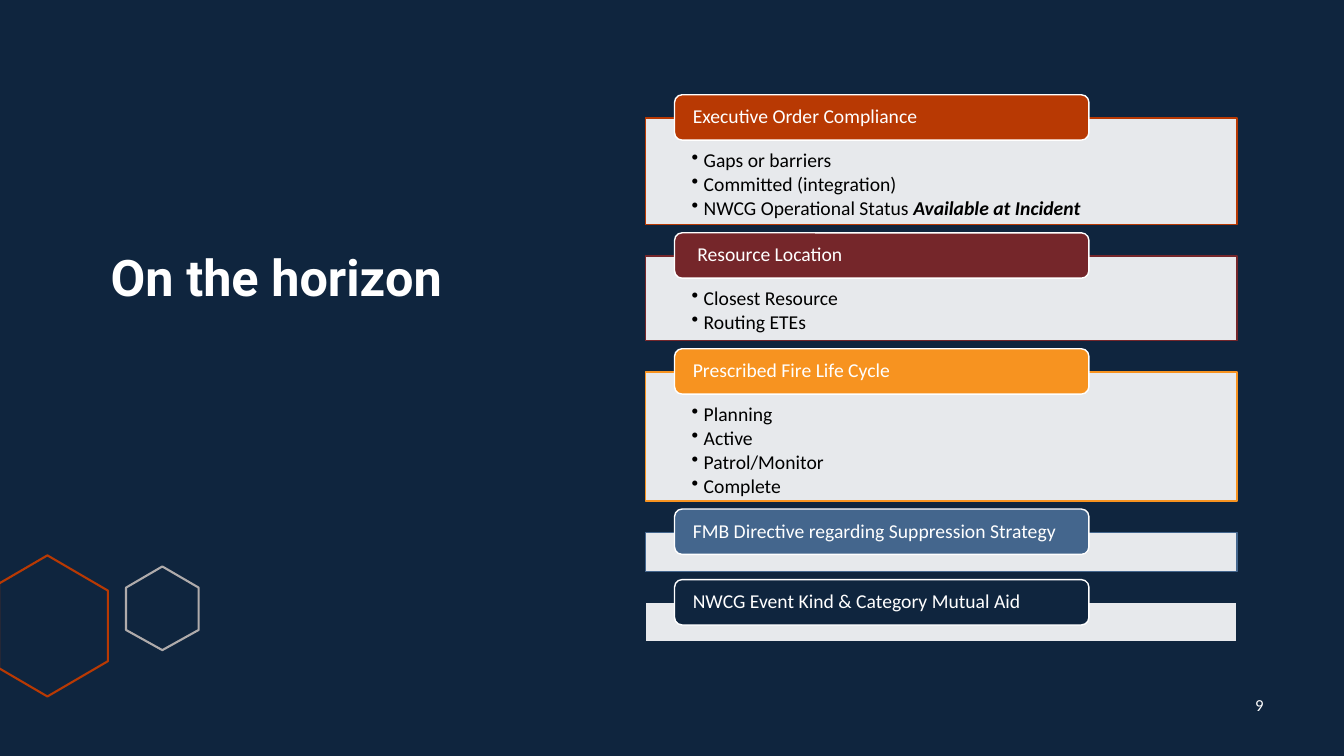
from dataclasses import dataclass

from lxml import etree
from pptx import Presentation
from pptx.dml.color import RGBColor
from pptx.enum.shapes import MSO_SHAPE
from pptx.enum.text import MSO_ANCHOR, PP_ALIGN
from pptx.oxml.ns import qn
from pptx.util import Inches, Pt

RECT, ROUND_RECT = MSO_SHAPE.RECTANGLE, MSO_SHAPE.ROUNDED_RECTANGLE
TOP, MIDDLE, BOTTOM = MSO_ANCHOR.TOP, MSO_ANCHOR.MIDDLE, MSO_ANCHOR.BOTTOM
LEFT, CENTER = PP_ALIGN.LEFT, PP_ALIGN.CENTER

COLORS = {
    "navy": "0F253E",
    "rust": "B83903",
    "maroon": "75262A",
    "orange": "F79320",
    "blue": "44668D",
    "gray": "AFABAB",
    "white": "FFFFFF",
    "black": "000000",
}

BODY = {"name": "Calibri", "size": Pt(14)}
EMPHASIS = {**BODY, "bold": True, "italic": True}
TITLE = {"name": "Roboto", "size": Pt(36), "bold": True}
NUMBER = {"name": "Calibri", "size": Pt(12)}

HEADER_TOP, HEADER_H = 0.94, 0.45
PANEL_DROP, TOPIC_GAP = 0.23, 0.08


@dataclass(frozen=True)
class Topic:
    heading: str
    color: str
    panel_height: float
    bullets: tuple[tuple[str, str], ...] = ()


@dataclass(frozen=True)
class Hexagon:
    color: str
    points: tuple[tuple[float, float], ...]


TOPICS = (
    Topic("Executive Order Compliance", "rust", 1.06, (
        ("Gaps or barriers", ""),
        ("Committed (integration)", ""),
        ("NWCG Operational Status ", "Available at Incident"),
    )),
    Topic(" Resource Location", "maroon", 0.84, (
        ("Closest Resource", ""),
        ("Routing ETEs", ""),
    )),
    Topic("Prescribed Fire Life Cycle", "orange", 1.28, (
        ("Planning", ""),
        ("Active", ""),
        ("Patrol/Monitor", ""),
        ("Complete", ""),
    )),
    Topic("FMB Directive regarding Suppression Strategy", "blue", 0.39),
    Topic("NWCG Event Kind & Category Mutual Aid", "navy", 0.39),
)

HEXAGONS = (
    Hexagon("rust", ((0.47, 5.51), (1.07, 5.86), (1.07, 6.56),
                     (0.47, 6.91), (-0.01, 6.63), (-0.01, 5.79))),
    Hexagon("gray", ((1.61, 5.62), (1.97, 5.83), (1.97, 6.25),
                     (1.61, 6.45), (1.25, 6.25), (1.25, 5.83))),
)


def rgb(color: str) -> RGBColor:
    return RGBColor.from_string(COLORS[color])


def set_line(s, color: str, width: float) -> None:
    s.line.color.rgb = rgb(color)
    s.line.width = Pt(width)
    s.shadow.inherit = False


def set_frame(tf, anchor, margins=(0.1, 0.05, 0.1, 0.05)) -> None:
    tf.word_wrap = True
    tf.vertical_anchor = anchor
    for side, margin in zip(("left", "top", "right", "bottom"), margins):
        setattr(tf, f"margin_{side}", Inches(margin))


def add_run(p, text: str, color: str, fmt: dict) -> None:
    r = p.add_run()
    r.text = text
    r.font.color.rgb = rgb(color)
    for name, value in fmt.items():
        setattr(r.font, name, value)


def set_line_text(tf, text: str, fmt: dict, align=LEFT) -> None:
    p = tf.paragraphs[0]
    p.alignment = align
    p.line_spacing = 0.9
    add_run(p, text, "white", fmt)


def add_box(slide, kind, box: tuple, fill: str, line: str):
    s = slide.shapes.add_shape(kind, *map(Inches, box))
    s.fill.solid()
    s.fill.fore_color.rgb = rgb(fill)
    set_line(s, line, 1)
    return s


def add_label(slide, box: tuple, text: str, fmt: dict, anchor, align) -> None:
    tf = slide.shapes.add_textbox(*map(Inches, box)).text_frame
    set_frame(tf, anchor)
    set_line_text(tf, text, fmt, align)


def add_bullet(p, text: str, emphasis: str) -> None:
    pPr = p._p.get_or_add_pPr()
    pPr.set("marL", str(Inches(0.12)))
    pPr.set("indent", str(Inches(-0.12)))
    etree.SubElement(pPr, qn("a:buChar")).set("char", "•")
    p.level = 1
    p.alignment = LEFT
    p.line_spacing = 0.9
    p.space_after = Pt(2)
    add_run(p, text, "black", BODY)
    if emphasis:
        add_run(p, emphasis, "black", EMPHASIS)


def add_topic(slide, topic: Topic, top: float) -> None:
    panel_box = (6.4, top + PANEL_DROP, 5.87, topic.panel_height)
    panel = add_box(slide, RECT, panel_box, "white", topic.color)
    fill = panel.fill._xPr.find(qn("a:solidFill"))
    etree.SubElement(fill[0], qn("a:alpha")).set("val", "90000")
    tf = panel.text_frame
    set_frame(tf, TOP, (0.46, 0.32, 0.46, 0.11))
    for i, (text, emphasis) in enumerate(topic.bullets):
        p = tf.add_paragraph() if i else tf.paragraphs[0]
        add_bullet(p, text, emphasis)

    header_box = (6.69, top, 4.11, HEADER_H)
    header = add_box(slide, ROUND_RECT, header_box, topic.color, "white")
    set_frame(header.text_frame, MIDDLE, (0.16, 0, 0.16, 0))
    set_line_text(header.text_frame, topic.heading, BODY)


def add_hexagon(slide, hexagon: Hexagon) -> None:
    start, *rest = [(Inches(x), Inches(y)) for x, y in hexagon.points]
    builder = slide.shapes.build_freeform(*start)
    builder.add_line_segments(rest, close=True)
    s = builder.convert_to_shape()
    s.fill.background()
    set_line(s, hexagon.color, 1.5)


def main() -> None:
    prs = Presentation()
    prs.slide_width, prs.slide_height = Inches(13.33), Inches(7.5)
    slide = prs.slides.add_slide(prs.slide_layouts[6])
    slide.background.fill.solid()
    slide.background.fill.fore_color.rgb = rgb("navy")

    for hexagon in HEXAGONS:
        add_hexagon(slide, hexagon)
    add_label(slide, (1, 0.8, 4.8, 2.3), "On the horizon", TITLE, BOTTOM, LEFT)
    add_label(slide, (12.24, 6.8, 0.5, 0.4), "9", NUMBER, MIDDLE, CENTER)

    top = HEADER_TOP
    for topic in TOPICS:
        add_topic(slide, topic, top)
        top += PANEL_DROP + topic.panel_height + TOPIC_GAP

    prs.save("out.pptx")


if __name__ == "__main__":
    main()
